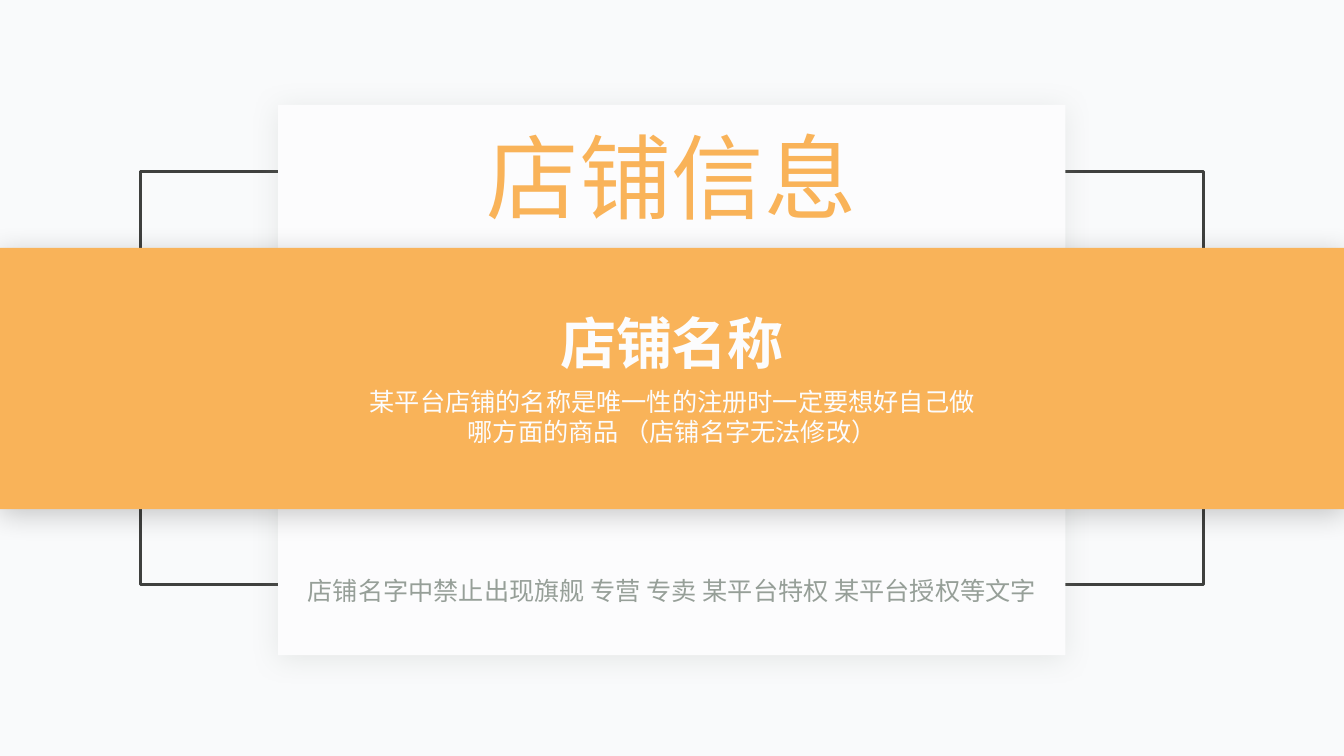
from lxml import etree
from pptx import Presentation
from pptx.dml.color import RGBColor
from pptx.enum import shapes, text
from pptx.oxml import ns
from pptx.util import Pt

FONT = "Noto Sans CJK SC"
PAPER = RGBColor(0xF9, 0xFA, 0xFB)
WHITE = RGBColor(0xFC, 0xFC, 0xFD)
ORANGE = RGBColor(0xF9, 0xB3, 0x59)
GRAY = RGBColor(0x96, 0x9F, 0x98)
DARK = RGBColor(0x3F, 0x40, 0x3E)
BLACK = RGBColor(0, 0, 0)
WIDTH, HEIGHT = 960, 540


def put_text(holder, wording, *, size, color, bold=False, wrap=False):
    """Fill a text holder with one centred, formatted paragraph."""
    frame = holder.text_frame
    frame.word_wrap = wrap
    frame.auto_size = text.MSO_AUTO_SIZE.SHAPE_TO_FIT_TEXT
    frame.vertical_anchor = text.MSO_ANCHOR.TOP
    paragraph = frame.paragraphs[0]
    paragraph.alignment = text.PP_ALIGN.CENTER
    run = paragraph.add_run()
    run.text = wording
    run.font.size = Pt(size)
    run.font.bold = bold
    run.font.name = FONT
    run.font.color.rgb = color
    etree.SubElement(run.font._element, ns.qn("a:ea"), typeface=FONT)


def centred(box, top, width, height):
    """Return lengths for a part centred across the box, top below its edge."""
    left, box_top, box_width, _ = box
    return [Pt(v) for v in (left + (box_width - width) / 2, box_top + top, width, height)]


def add_panel(slide, preset, box, fill=None, line=None, shadow=None):
    """Add a plain panel with an optional fill, outline and soft shadow."""
    panel = slide.shapes.add_shape(preset, *[Pt(v) for v in box])
    panel.shadow.inherit = False
    if fill is None:
        panel.fill.background()
    else:
        panel.fill.solid()
        panel.fill.fore_color.rgb = fill
    if line is None:
        panel.line.fill.background()
    else:
        panel.line.color.rgb = line
        panel.line.width = Pt(2)
    if shadow is not None:
        effects = panel._element.spPr.find(ns.qn("a:effectLst"))
        outer = etree.SubElement(effects, ns.qn("a:outerShdw"), blurRad=str(Pt(20)),
                                 dist=str(Pt(3)), dir="5400000", algn="t", rotWithShape="0")
        tint = etree.SubElement(outer, ns.qn("a:srgbClr"), val=str(shadow))
        etree.SubElement(tint, ns.qn("a:alpha"), val="20000")
    return panel


def add_card(slide, box):
    """Add the white card with the slide title and the naming rule."""
    add_panel(slide, shapes.MSO_SHAPE.RECTANGLE, box, fill=WHITE, shadow=GRAY)
    title = slide.shapes.title
    title.left, title.top, title.width, title.height = centred(box, 7.2, 278.6, 87.1)
    put_text(title, "店铺信息", size=66, color=ORANGE)
    slide.shapes._spTree.append(title._element)
    rule = slide.shapes.add_textbox(*centred(box, 332.6, 540, 29))
    put_text(rule, "店铺名字中禁止出现旗舰 专营 专卖 某平台特权 某平台授权等文字",
             size=18, color=GRAY)


def add_banner(slide, box):
    """Add the full-width band with the shop name heading and its advice."""
    band = add_panel(slide, shapes.MSO_SHAPE.ROUNDED_RECTANGLE, box, fill=ORANGE, shadow=BLACK)
    band.adjustments[0] = 0
    heading = slide.shapes.add_textbox(*centred(box, 39.6, 174.2, 55.4))
    put_text(heading, "店铺名称", size=40, color=WHITE, bold=True)
    advice = slide.shapes.add_textbox(*centred(box, 95, 455, 51.1))
    put_text(advice, "某平台店铺的名称是唯一性的注册时一定要想好自己做哪方面的商品 （店铺名字无法修改）",
             size=18, color=WHITE, wrap=True)


def main():
    """Build and save the shop information slide."""
    deck = Presentation()
    deck.slide_width, deck.slide_height = Pt(WIDTH), Pt(HEIGHT)
    slide = deck.slides.add_slide(deck.slide_layouts.get_by_name("Title Only"))
    slide.background.fill.solid()
    slide.background.fill.fore_color.rgb = PAPER
    add_panel(slide, shapes.MSO_SHAPE.RECTANGLE, (100.5, 122.4, 759, 295.2), line=DARK)
    add_card(slide, (198.7, 74.9, 562.3, 393.1))
    add_banner(slide, (0, 177.1, WIDTH, 186.5))
    deck.save("out.pptx")


if __name__ == "__main__":
    main()
